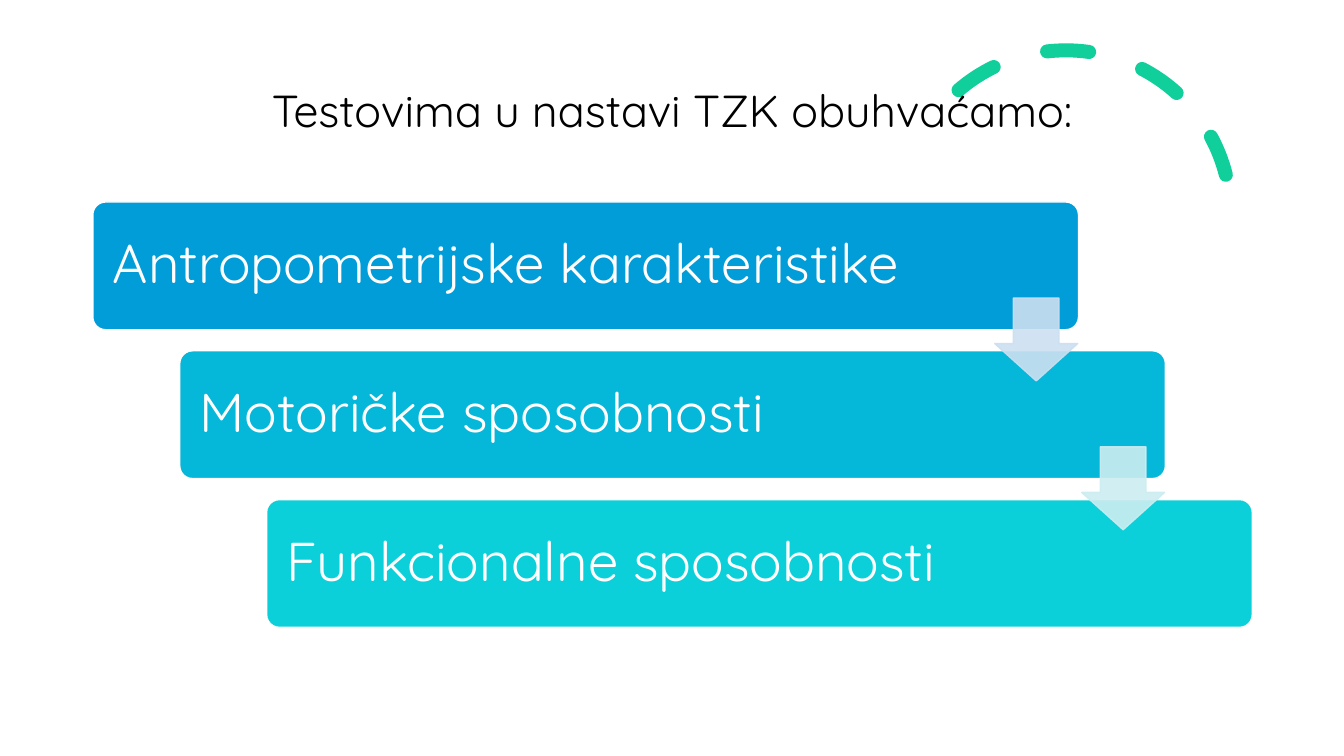
from lxml.etree import SubElement
from pptx import Presentation
from pptx.dml.color import RGBColor
from pptx.enum.dml import MSO_LINE
from pptx.enum.shapes import MSO_SHAPE as Preset
from pptx.enum.text import MSO_ANCHOR as Anchor, PP_ALIGN as Align
from pptx.oxml.ns import qn
from pptx.util import Cm, Pt

# Content
TITLE = "Testovima u nastavi TZK obuhvaćamo:"
STEPS = [
    ("Antropometrijske karakteristike", "009DD9"),
    ("Motoričke sposobnosti", "05B7D9"),
    ("Funkcionalne sposobnosti", "0BD0D9"),
]
ARROW_COLOURS = ["CCDFF1", "CCEDF1"]
FONT = "Quicksand"

# Layout in centimetres
BAR_LEFT, BAR_TOP, BAR_WIDTH, BAR_HEIGHT = 2.34, 5.09, 24.84, 3.22
ARROW_LEFT, ARROW_TOP, ARROW_SIZE = 25.07, 7.51, 2.09
STEP_RIGHT, STEP_DOWN = 2.19, 3.75


def paint(colour_format, colour, alpha=None):
    colour_format.rgb = RGBColor.from_string(colour)
    return colour_format


def add_preset(page, preset, left, top, width, height, adjust,
               fill=None, line="FFFFFF", weight=1, alpha=None):
    shape = page.shapes.add_shape(preset, Cm(left), Cm(top), Cm(width), Cm(height))
    shape.shadow.inherit = False
    for index, value in enumerate(adjust):
        shape.adjustments[index] = value
    if fill:
        shape.fill.solid()
        paint(shape.fill.fore_color, fill)
    else:
        shape.fill.background()
    paint(shape.line.color, line)
    shape.line.width = Pt(weight)
    if alpha:
        for colour in shape.element.spPr.iter(qn("a:srgbClr")):
            SubElement(colour, qn("a:alpha")).set("val", str(alpha * 1000))
    return shape


def write(box, text, size, colour, align=Align.LEFT, inset=None):
    frame = box.text_frame
    frame.word_wrap = True
    frame.vertical_anchor = Anchor.MIDDLE
    if inset is not None:
        frame.margin_left = frame.margin_right = Cm(inset)
        frame.margin_top = frame.margin_bottom = Cm(inset)
    para = frame.paragraphs[0]
    para.alignment = align
    para.line_spacing = 0.9
    span = para.add_run()
    span.text = text
    span.font.name = FONT
    span.font.size = Pt(size)
    paint(span.font.color, colour)


deck = Presentation()
deck.slide_width, deck.slide_height = Cm(33.87), Cm(19.05)
page = deck.slides.add_slide(deck.slide_layouts[6])

# Dashed arc
arc = add_preset(page, Preset.ARC, 22.71, 1.27, 8.31, 8.31, [146.13, 0],
                 line="10CF9B", weight=10)
arc.rotation = 345.8
arc.line.dash_style = MSO_LINE.DASH
arc.element.spPr.find(qn("a:ln")).set("cap", "rnd")

# Title
title = page.shapes.add_textbox(Cm(2.34), Cm(1.02), Cm(29.21), Cm(3.68))
write(title, TITLE, 32, "000000", align=Align.CENTER)

# Staggered bars
for index, (label, colour) in enumerate(STEPS):
    bar = add_preset(page, Preset.ROUNDED_RECTANGLE,
                     BAR_LEFT + index * STEP_RIGHT, BAR_TOP + index * STEP_DOWN,
                     BAR_WIDTH, BAR_HEIGHT, [0.1], fill=colour)
    write(bar, label, 39, "FFFFFF", inset=0.41)

# Arrows between the bars
for index, colour in enumerate(ARROW_COLOURS):
    add_preset(page, Preset.DOWN_ARROW,
               ARROW_LEFT + index * STEP_RIGHT, ARROW_TOP + index * STEP_DOWN,
               ARROW_SIZE, ARROW_SIZE, [0.45, 0.55] [::-1],
               fill=colour, line=colour, alpha=90)

deck.save("out.pptx")
